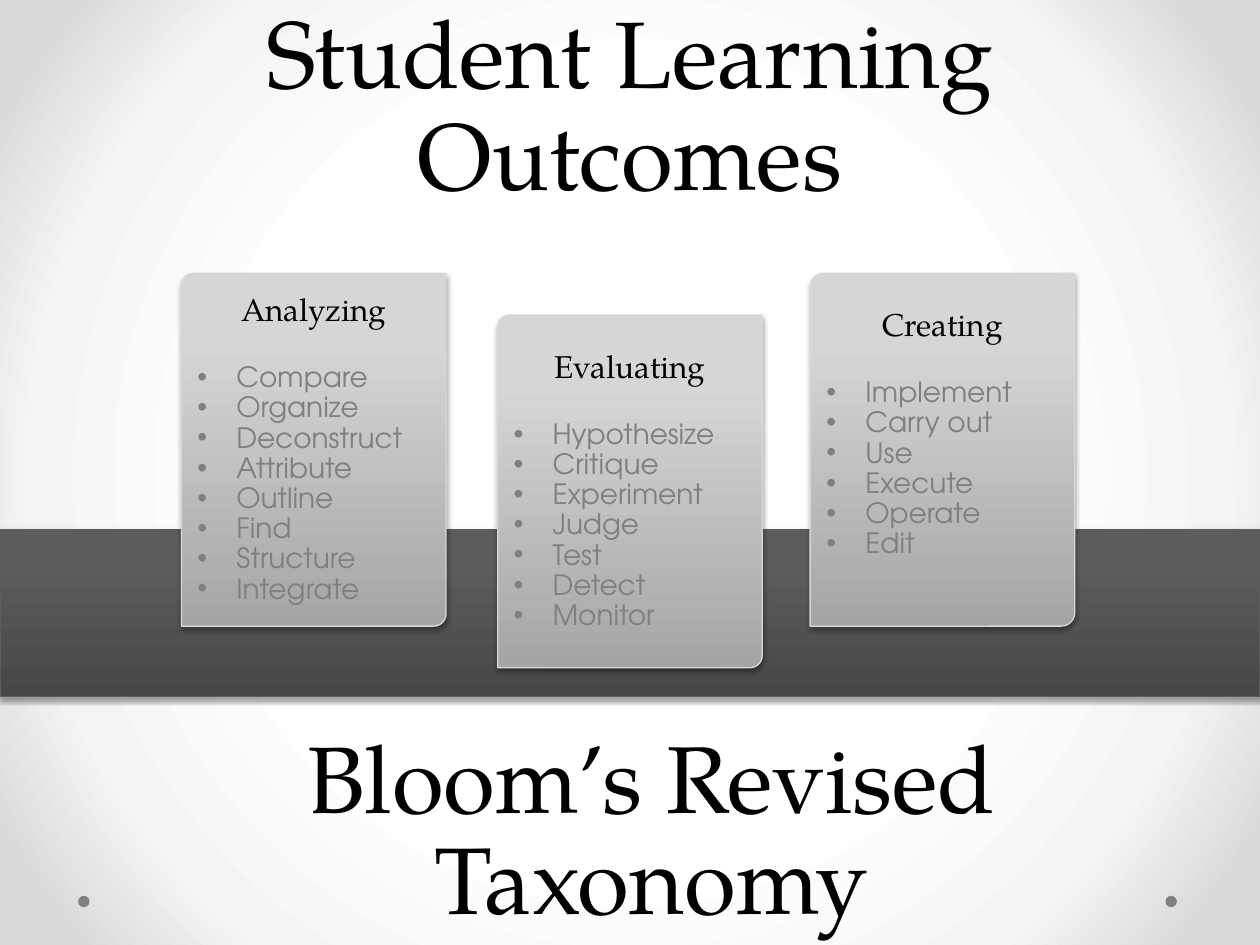
from lxml.etree import SubElement as Sub
from pptx import Presentation
from pptx.dml.color import RGBColor as Rgb
from pptx.enum.shapes import MSO_SHAPE as Kind
from pptx.enum.text import MSO_ANCHOR as Anchor, MSO_AUTO_SIZE as Fit, PP_ALIGN as Align
from pptx.oxml.ns import qn
from pptx.util import Inches, Pt

TITLE = "Student Learning Outcomes"
FOOT = "Bloom’s Revised Taxonomy"
CARDS = [
    {"head": "Analyzing", "at": (1.44, 2.17), "curve": 0.046, "base": 0.05,
     "verbs": ["Compare", "Organize", "Deconstruct", "Attribute",
               "Outline", "Find", "Structure", "Integrate"]},
    {"head": "Evaluating", "at": (3.95, 2.5), "curve": 0.046, "base": 0.05,
     "verbs": ["Hypothesize", "Critique", "Experiment", "Judge",
               "Test", "Detect", "Monitor"]},
    {"head": "Creating", "at": (6.43, 2.17), "curve": 0.051, "base": 0.29,
     "verbs": ["Implement", "Carry out", "Use", "Execute", "Operate", "Edit"]},
]
COLORS = {"ink": "000000", "gray": "808080", "band": "5D5D5D", "edge": "D8D8D8"}
FADES = {
    "back": [(50, "FFFFFF"), (76, "F4F4F4"), (92, "DADADA")],
    "band": [(0, "474747"), (80, "5C5C5C"), (100, "5C5C5C")],
    "card": [(0, "A5A5A5"), (80, "D6D6D6"), (100, "D7D7D7")],
}
SERIF, SANS = "TeX Gyre Pagella", "TeX Gyre Adventor"
FONTS = {
    "title": {"name": SERIF, "size": Pt(54)},
    "head": {"name": SERIF, "size": Pt(18)},
    "verb": {"name": SANS, "size": Pt(16)},
}
PARAS = {
    "title": {"alignment": Align.CENTER, "line_spacing": Pt(58), "space_before": Pt(0)},
    "head": {"alignment": Align.CENTER, "line_spacing": 0.9, "space_after": Pt(20)},
    "verb": {"alignment": Align.LEFT, "line_spacing": 0.9},
}
INKS = {"title": "ink", "head": "ink", "verb": "gray"}
FRAME = {"word_wrap": True, "auto_size": Fit.NONE}


def assign(thing, values):
    for name, value in values.items():
        setattr(thing, name, value)


def place(shape, box):
    assign(shape, dict(zip(("left", "top", "width", "height"), map(Inches, box))))


def fade(fill, root, stops, radial=False):
    fill.solid()
    old = root.find(qn("a:solidFill"))
    grad = old.makeelement(qn("a:gradFill"), {"rotWithShape": "1"})
    root.replace(old, grad)
    group = Sub(grad, qn("a:gsLst"))
    for pos, tone in stops:
        stop = Sub(group, qn("a:gs"), pos=str(pos * 1000))
        Sub(stop, qn("a:srgbClr"), val=tone)
    if radial:
        way = Sub(grad, qn("a:path"), path="circle")
        Sub(way, qn("a:fillToRect"), dict.fromkeys("ltrb", "50000"))
    else:
        Sub(grad, qn("a:lin"), ang=str(270 * 60000), scaled="0")


def panel(slide, kind, box, stops, edge):
    shape = slide.shapes.add_shape(kind, *map(Inches, box))
    root = shape._element.spPr
    fade(shape.fill, root, stops)
    shape.line.color.rgb = Rgb.from_string(COLORS[edge])
    shape.line.width = Pt(0.75)
    shape.shadow.inherit = False
    cast = Sub(root.find(qn("a:effectLst")), qn("a:outerShdw"), blurRad=str(Pt(3.1)),
               dist=str(Pt(1.8)), dir=str(90 * 60000), rotWithShape="0")
    tone = Sub(cast, qn("a:srgbClr"), val=COLORS["ink"])
    Sub(tone, qn("a:alpha"), val="35000")
    return shape


def write(para, text, role):
    assign(para, PARAS[role])
    run = para.add_run()
    run.text = text
    assign(run.font, FONTS[role])
    run.font.color.rgb = Rgb.from_string(COLORS[INKS[role]])


def banner(shape, box, text):
    place(shape, box)
    frame = shape.text_frame
    assign(frame, {**FRAME, "vertical_anchor": Anchor.TOP})
    write(frame.paragraphs[0], text, "title")


def card(slide, data):
    shape = panel(slide, Kind.ROUND_2_DIAG_RECTANGLE, (*data["at"], 2.1, 2.8),
                  FADES["card"], "edge")
    shape.adjustments[0] = data["curve"]
    frame = shape.text_frame
    assign(frame, {**FRAME, "vertical_anchor": Anchor.MIDDLE,
                   "margin_bottom": Inches(data["base"])})
    write(frame.paragraphs[0], data["head"], "head")
    for verb in data["verbs"]:
        para = frame.add_paragraph()
        write(para, verb, "verb")
        props = para._p.get_or_add_pPr()
        props.set("marL", str(Inches(0.31)))
        props.set("indent", str(-Inches(0.31)))
        Sub(props, qn("a:buFont"), typeface="Arial")
        Sub(props, qn("a:buChar"), char="•")


def main():
    deck = Presentation()
    assign(deck, {"slide_width": Inches(10), "slide_height": Inches(7.5)})
    slide = deck.slides.add_slide(deck.slide_layouts[5])
    fill = slide.background.fill
    fill.solid()
    fade(fill, slide._element.cSld.find(qn("p:bg")).find(qn("p:bgPr")),
         FADES["back"], True)
    for left in (9.25, 0.62):
        dot = slide.shapes.add_shape(Kind.OVAL, *map(Inches, (left, 7.11, 0.09, 0.09)))
        dot.fill.solid()
        dot.fill.fore_color.rgb = Rgb.from_string(COLORS["gray"])
        dot.line.fill.background()
        dot.shadow.inherit = False
    panel(slide, Kind.RECTANGLE, (0, 4.2, 10, 1.33), FADES["band"], "band")
    for data in CARDS:
        card(slide, data)
    foot = slide.shapes.add_textbox(0, 0, 0, 0)
    banner(foot, (0.67, 5.75, 9, 1.75), FOOT)
    banner(slide.shapes.title, (0.5, 0, 9, 1.75), TITLE)
    deck.save("out.pptx")


if __name__ == "__main__":
    main()
